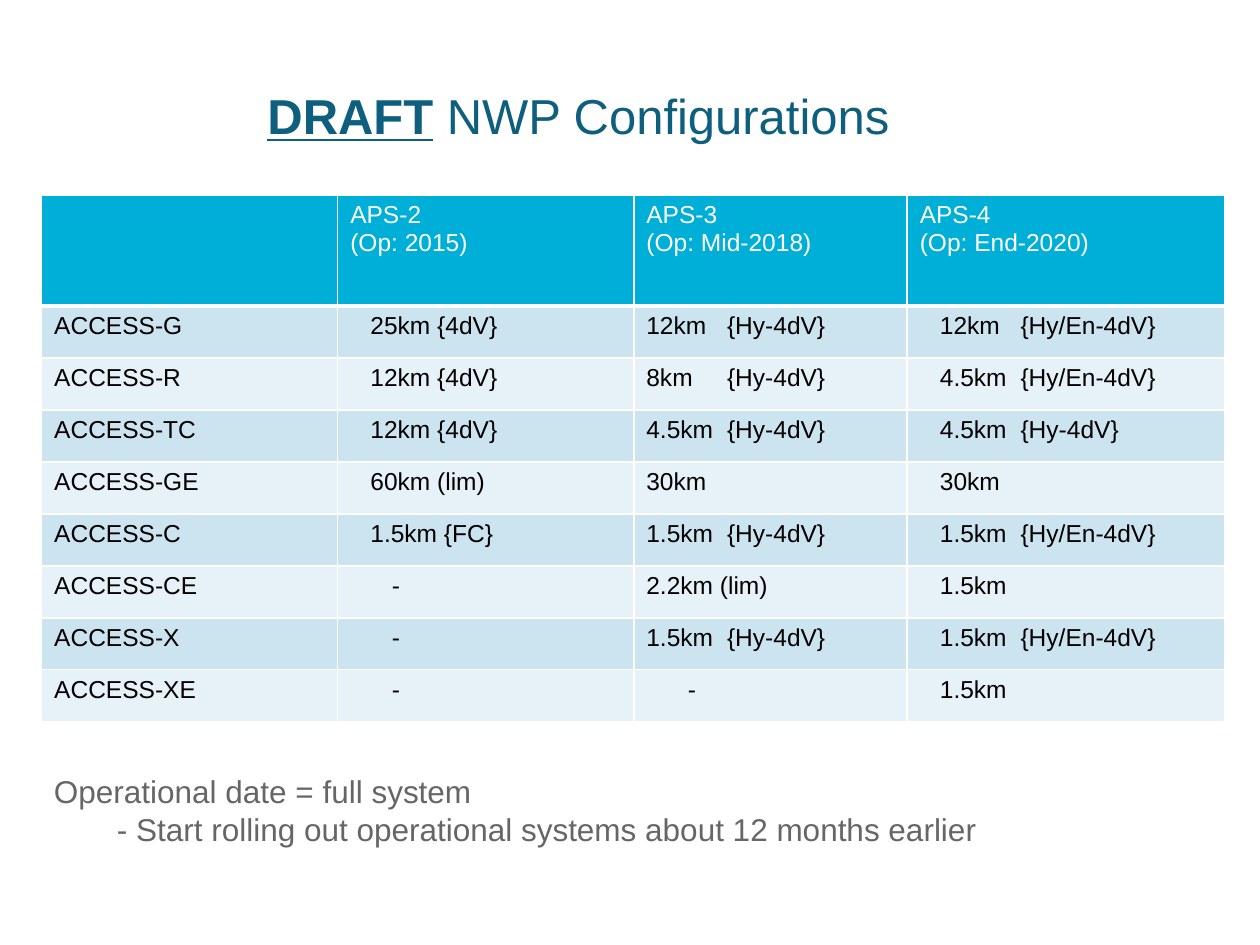
from lxml.etree import SubElement
from pptx import Presentation
from pptx.dml.color import RGBColor
from pptx.enum.text import MSO_ANCHOR, PP_ALIGN
from pptx.oxml.ns import qn
from pptx.util import Inches, Pt

FONT = "Arial"
COLORS = {
    "title": "0E5F7E",
    "header": "00AFD7",
    "odd_row": "CCE3F0",
    "even_row": "E7F2F8",
    "white": "FFFFFF",
    "cell_text": "010000",
    "note": "666666",
}
HEADERS = ["", "APS-2\n(Op: 2015)", "APS-3\n(Op: Mid-2018)", "APS-4\n(Op: End-2020)"]
# A tab separates the resolution from the assimilation scheme
MODELS = [
    ["ACCESS-G", "25km {4dV}", "12km\t{Hy-4dV}", "12km\t{Hy/En-4dV}"],
    ["ACCESS-R", "12km {4dV}", "8km\t{Hy-4dV}", "4.5km\t{Hy/En-4dV}"],
    ["ACCESS-TC", "12km {4dV}", "4.5km\t{Hy-4dV}", "4.5km\t{Hy-4dV}"],
    ["ACCESS-GE", "60km (lim)", "30km", "30km"],
    ["ACCESS-C", "1.5km {FC}", "1.5km\t{Hy-4dV}", "1.5km\t{Hy/En-4dV}"],
    ["ACCESS-CE", "-", "2.2km (lim)", "1.5km"],
    ["ACCESS-X", "-", "1.5km\t{Hy-4dV}", "1.5km\t{Hy/En-4dV}"],
    ["ACCESS-XE", "-", "-", "1.5km"],
]
COLUMN_WIDTHS = [2.35, 2.35, 2.17, 2.52]
COLUMN_MARGINS = [0.1, 0.26, 0.1, 0.26]
DASH_MARGIN = 0.43
SCHEME_TAB = 0.64
HEADER_HEIGHT = 0.88
BODY_HEIGHT = 3.3


def rgb(name):
    return RGBColor.from_string(COLORS[name])


def format_font(font, size, color):
    font.name = FONT
    font.size = Pt(size)
    font.color.rgb = rgb(color)


def add_tab_stop(paragraph, position):
    tab_list = SubElement(paragraph._p.get_or_add_pPr(), qn("a:tabLst"))
    SubElement(tab_list, qn("a:tab"), pos=str(Inches(position)), algn="l")


def add_borders(cell, bottom_width):
    properties = cell._tc.get_or_add_tcPr()
    for side, width in (("L", 1), ("R", 1), ("T", 1), ("B", bottom_width)):
        line = SubElement(properties, qn(f"a:ln{side}"), w=str(Pt(width)))
        fill = SubElement(line, qn("a:solidFill"))
        SubElement(fill, qn("a:srgbClr"), val=COLORS["white"])


def fill_cell(cell, text, fill, text_color, margin, bottom_width=1):
    add_borders(cell, bottom_width)
    cell.fill.solid()
    cell.fill.fore_color.rgb = rgb(fill)
    cell.margin_left = Inches(margin)
    cell.text_frame.text = text
    for paragraph in cell.text_frame.paragraphs:
        if "\t" in text:
            add_tab_stop(paragraph, SCHEME_TAB)
        format_font(paragraph.font, 14, text_color)
        for run in paragraph.runs:
            format_font(run.font, 14, text_color)
            run.font.bold = False


def add_title(slide):
    title = slide.shapes.title
    title.left, title.top = Inches(1.02), Inches(0.29)
    title.width, title.height = Inches(7.14), Inches(1.25)
    title.text_frame.vertical_anchor = MSO_ANCHOR.MIDDLE
    paragraph = title.text_frame.paragraphs[0]
    paragraph.alignment = PP_ALIGN.CENTER
    for text, is_draft in (("DRAFT", True), (" NWP Configurations", False)):
        run = paragraph.add_run()
        run.text = text
        format_font(run.font, 28, "title")
        run.font.bold = is_draft
        run.font.underline = is_draft


def add_configurations(slide):
    table = slide.shapes.add_table(
        len(MODELS) + 1, len(HEADERS), Inches(0.33), Inches(1.55),
        Inches(sum(COLUMN_WIDTHS)), Inches(HEADER_HEIGHT + BODY_HEIGHT),
    ).table
    for column, width in zip(table.columns, COLUMN_WIDTHS):
        column.width = Inches(width)
    for row in table.rows:
        row.height = Inches(BODY_HEIGHT / len(MODELS))
    table.rows[0].height = Inches(HEADER_HEIGHT)

    # Header row
    for column, header in enumerate(HEADERS):
        fill_cell(table.cell(0, column), header, "header", "white", 0.1, bottom_width=3)

    # One banded row per model
    for row, model in enumerate(MODELS, start=1):
        band = "odd_row" if row % 2 else "even_row"
        for column, value in enumerate(model):
            margin = DASH_MARGIN if value == "-" else COLUMN_MARGINS[column]
            fill_cell(table.cell(row, column), value, band, "cell_text", margin)


def add_note(slide):
    note = slide.shapes.add_textbox(Inches(0.33), Inches(6.08), Inches(7.83), Inches(0.71))
    frame = note.text_frame
    frame.word_wrap = True
    frame.text = (
        "Operational date = full system\n"
        "- Start rolling out operational systems about 12 months earlier"
    )
    frame.paragraphs[1]._p.get_or_add_pPr().set("marL", str(Inches(0.5)))
    for paragraph in frame.paragraphs:
        format_font(paragraph.runs[0].font, 18, "note")


def main():
    presentation = Presentation()
    presentation.slide_width = Inches(10)
    presentation.slide_height = Inches(7.5)
    slide = presentation.slides.add_slide(presentation.slide_layouts[5])
    add_title(slide)
    add_configurations(slide)
    add_note(slide)
    presentation.save("out.pptx")


if __name__ == "__main__":
    main()
